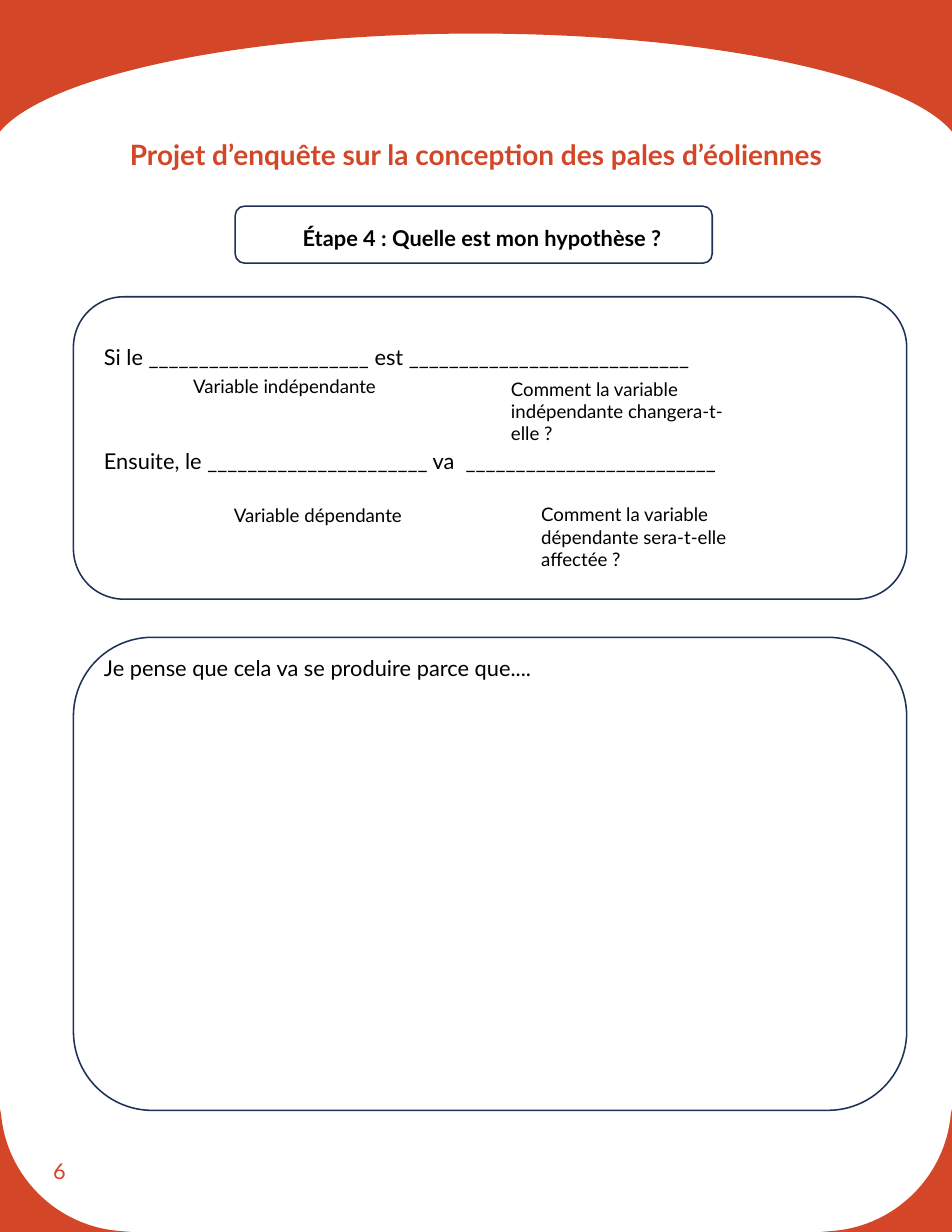
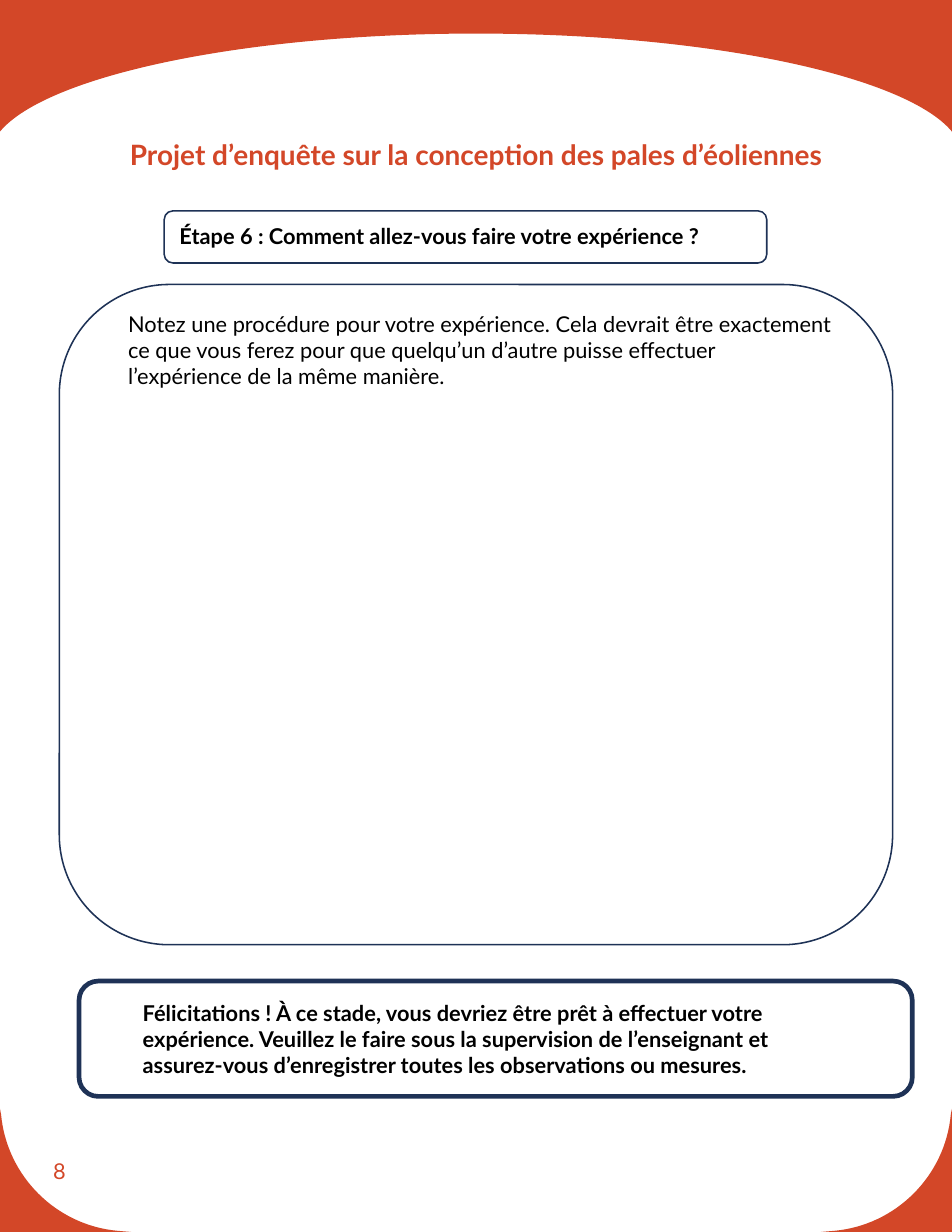
"""Two worksheet pages of a wind turbine blade inquiry project."""
from dataclasses import dataclass

from lxml import etree
from pptx import Presentation
from pptx import util as u
from pptx.dml import color
from pptx.enum import shapes, text
from pptx.oxml import ns


@dataclass(frozen=True)
class Style:
    size: int
    bold: bool = False
    tint: str = "000000"
    align: text.PP_ALIGN = text.PP_ALIGN.LEFT
    anchor: text.MSO_ANCHOR = text.MSO_ANCHOR.TOP
    spacing: float = 1.0


class Theme:
    font = "Lato"
    orange = "D34728"
    navy = "1E3256"
    thin, thick = 1, 3
    answer_gap = 50
    answer_stop = 3.23
    title = Style(18, True, orange, text.PP_ALIGN.CENTER, spacing=1.3)
    number = Style(14, tint=orange, anchor=text.MSO_ANCHOR.MIDDLE)
    body = Style(14)
    strong = Style(14, True)
    label = Style(12)


def mirror(points):
    return [(WIDTH - x, y) for x, y in points]


def bend(band, first, count):
    lines = list(band.element.iter(ns.qn("a:lnTo")))[first:first + 3 * count]
    for start in range(0, len(lines), 3):
        arc = etree.Element(ns.qn("a:cubicBezTo"))
        lines[start].addprevious(arc)
        for line in lines[start:start + 3]:
            arc.append(line[0])
            line.getparent().remove(line)


COLUMNS, ROWS = 85, 110
WIDTH, HEIGHT = 8500, 11000

deck = Presentation()
deck.slide_width, deck.slide_height = u.Inches(8.5), u.Inches(11)
column, row = deck.slide_width / COLUMNS, deck.slide_height / ROWS
layout = deck.slide_layouts[6]
for holder in list(layout.placeholders):
    layout.shapes.element.remove(holder.element)

half_arch = [(0, 0), (0, 1180), (0, 1175), (410, 680), (2160, 300)]
arch = half_arch + [(WIDTH / 2, 300)] + mirror(half_arch)[::-1]
corner = [(0, HEIGHT), (0, 9900), (10, 9950), (60, 10500), (500, 10940), (1050, 10990),
          (1170, HEIGHT)]
decorations = [(arch, 2), (corner, 1), (mirror(corner), 1)]

title = "Projet d’enquête sur la conception des pales d’éoliennes"
title_cells = (3.56, 10.9, 77.9, 8.6)
number_cells = (3.76, 101.6, 19.1, 5.9)

hypothesis = {
    "number": "6",
    "frames": [
        ((6.56, 56.9, 74.4, 42.24), Theme.thin),
        ((6.56, 26.5, 74.4, 27), Theme.thin),
        ((21, 18.4, 42.6, 5.1), Theme.thin),
    ],
    "texts": [
        ((8.3, 57.95, 72.6, 3.4), "Je pense que cela va se produire parce que....", Theme.body),
        ((8.3, 30.2, 72.6, 12.8),
         "Si le ______________________ est ____________________________\n"
         "Ensuite, le ______________________ va\t_________________________", Theme.body),
        ((16.26, 33, 22.7, 3), "Variable indépendante", Theme.label),
        ((44.64, 33.2, 22.7, 7.1),
         "Comment la variable indépendante changera-t-elle ?", Theme.label),
        ((19.9, 44.5, 22.7, 3), "Variable dépendante", Theme.label),
        ((47.34, 44.43, 22.7, 7.1),
         "Comment la variable dépendante sera-t-elle affectée ?", Theme.label),
        ((26.04, 19.6, 41.3, 3.4), "Étape 4 : Quelle est mon hypothèse ?", Theme.strong),
    ],
}
procedure = {
    "number": "8",
    "frames": [
        ((5.3, 25.4, 74.4, 58.95), Theme.thin),
        ((14.66, 18.83, 53.8, 4.65), Theme.thin),
        ((7.06, 87.6, 74.4, 10.3), Theme.thick),
    ],
    "texts": [
        ((10.46, 27.25, 65, 8.1),
         "Notez une procédure pour votre expérience. Cela devrait être exactement ce que "
         "vous ferez pour que quelqu’un d’autre puisse effectuer l’expérience de la même "
         "manière.", Theme.body),
        ((15.04, 19.4, 55.8, 5.7),
         "Étape 6 : Comment allez-vous faire votre expérience ?", Theme.strong),
        ((11.76, 88.73, 65, 8.1),
         "Félicitations ! À ce stade, vous devriez être prêt à effectuer votre expérience. "
         "Veuillez le faire sous la supervision de l’enseignant et assurez-vous "
         "d’enregistrer toutes les observations ou mesures.", Theme.strong),
    ],
}

pages = [deck.slides.add_slide(layout) for sheet in (hypothesis, procedure)]

bands = []
for outline, arcs in decorations:
    builder = pages[0].shapes.build_freeform(*outline[0], scale=deck.slide_width / WIDTH)
    builder.add_line_segments(outline[1:], close=True)
    band = builder.convert_to_shape()
    bend(band, 2, arcs)
    band.shadow.inherit = False
    band.fill.solid()
    band.fill.fore_color.rgb = color.RGBColor.from_string(Theme.orange)
    band.line.fill.background()
    bands.append(band)
for band in bands:
    layout.shapes.element.append(band.element)

for page, sheet in zip(pages, (hypothesis, procedure)):
    for (left, top, width, height), weight in sheet["frames"]:
        frame = page.shapes.add_shape(
            shapes.MSO_SHAPE.ROUNDED_RECTANGLE,
            round(left * column), round(top * row), round(width * column), round(height * row))
        frame.shadow.inherit = False
        frame.fill.background()
        frame.line.color.rgb = color.RGBColor.from_string(Theme.navy)
        frame.line.width = u.Pt(weight)

    shared = [(number_cells, sheet["number"], Theme.number), (title_cells, title, Theme.title)]
    for (left, top, width, height), words, style in shared + sheet["texts"]:
        box = page.shapes.add_textbox(
            round(left * column), round(top * row), round(width * column), round(height * row))
        box.text_frame.word_wrap = True
        box.text_frame.vertical_anchor = style.anchor
        box.text_frame.text = words
        for index, para in enumerate(box.text_frame.paragraphs):
            para.alignment = style.align
            para.line_spacing = style.spacing
            if index:
                para.space_before = u.Pt(Theme.answer_gap)
                stops = etree.SubElement(para.runs[0].font.fill and para._p.get_or_add_pPr(),
                                         ns.qn("a:tabLst"))
                etree.SubElement(stops, ns.qn("a:tab"),
                                 pos=str(u.Inches(Theme.answer_stop)), algn="l")
            for span in para.runs:
                span.font.name = Theme.font
                span.font.size = u.Pt(style.size)
                span.font.bold = style.bold
                span.font.color.rgb = color.RGBColor.from_string(style.tint)

deck.save("out.pptx")
